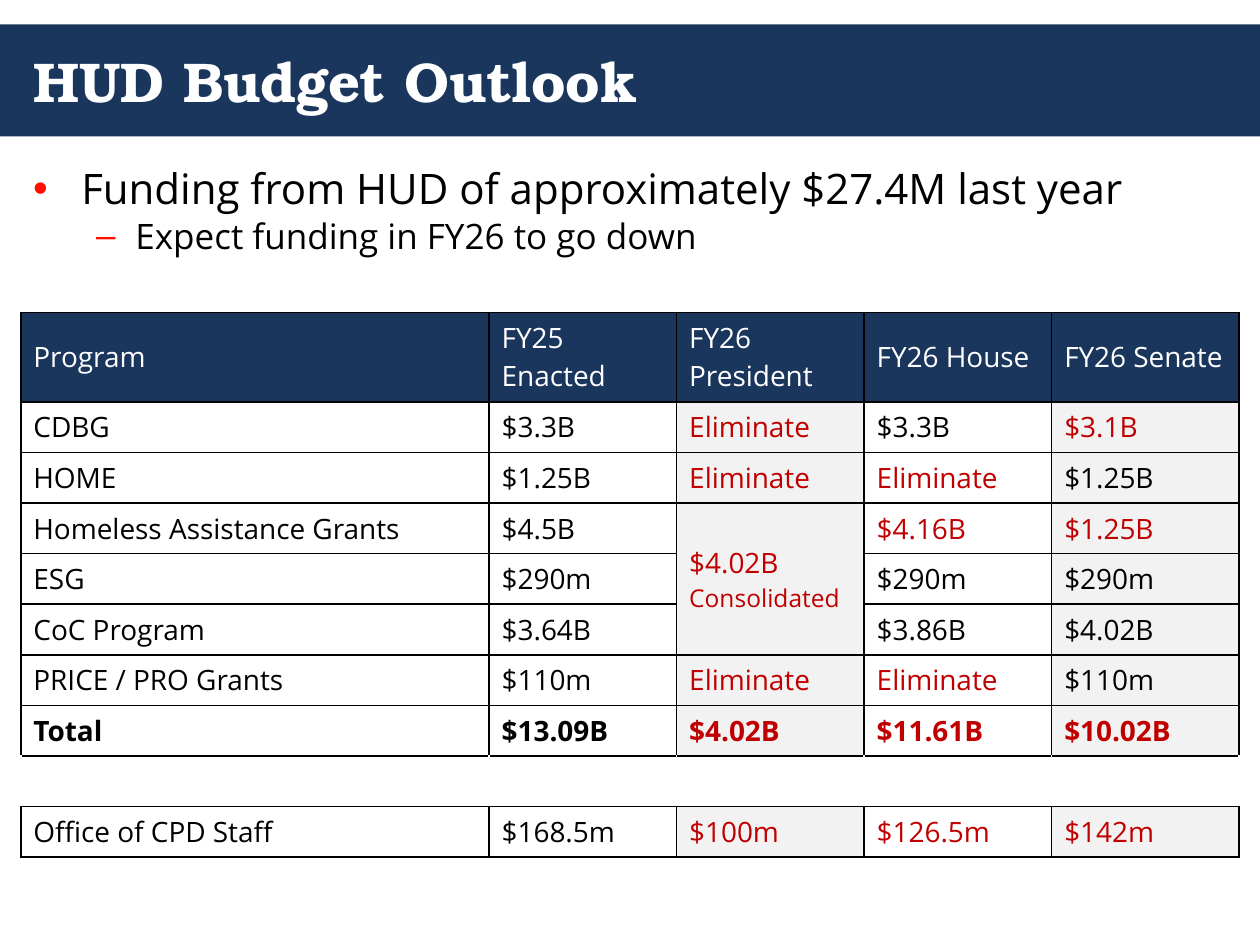
from lxml.etree import SubElement as Sub
from pptx import Presentation
from pptx.dml.color import RGBColor as Rgb
from pptx.enum.shapes import MSO_SHAPE as Form
from pptx.enum.text import MSO_ANCHOR as Anchor, PP_ALIGN as Align
from pptx.oxml.ns import qn
from pptx.util import Cm, Pt

NAVY = Rgb(0x1B, 0x36, 0x5D)
WHITE = Rgb(0xFF, 0xFF, 0xFF)
BLACK = Rgb(0, 0, 0)
RED = Rgb(0xC0, 0, 0)
BRIGHT = Rgb(0xFF, 0x0F, 0)
GREY = Rgb(0xF2, 0xF2, 0xF2)
SANS = "Open Sans"
SERIF = "TeX Gyre Bonum"

FLAG = "!"
HEAD, MERGE, TOTAL = 1, 4, 8
SHADED = (2, 4)
ROWS = [
    [],
    ["Program", "FY25 Enacted", "FY26 President", "FY26 House", "FY26 Senate"],
    ["CDBG", "$3.3B", "!Eliminate", "$3.3B", "!$3.1B"],
    ["HOME", "$1.25B", "!Eliminate", "!Eliminate", "$1.25B"],
    ["Homeless Assistance Grants", "$4.5B", "!$4.02B\nConsolidated",
     "!$4.16B", "!$1.25B"],
    ["ESG", "$290m", "", "$290m", "$290m"],
    ["CoC Program", "$3.64B", "", "$3.86B", "$4.02B"],
    ["PRICE / PRO Grants", "$110m", "!Eliminate", "!Eliminate", "$110m"],
    ["Total", "$13.09B", "!$4.02B", "!$11.61B", "!$10.02B"],
    [],
    ["Office of CPD Staff", "$168.5m", "!$100m", "!$126.5m", "!$142m"],
]
POINTS = [
    ("Funding from HUD of approximately $27.4M last year", "•", 24, 0.97, 0.97, 0),
    ("Expect funding in FY26 to go down", "–", 20, 2.06, 0.79, 1),
]


def style(para, size, color, face=SANS, bold=False):
    font = para.font
    font.size, font.name, font.bold = Pt(size), face, bold
    font.color.rgb = color


def add_title(slide, left, top, width, height):
    band = slide.shapes.add_shape(Form.RECTANGLE, left, top, width, height)
    band.shadow.inherit = False
    band.fill.solid()
    band.fill.fore_color.rgb = NAVY
    band.line.fill.background()
    title = slide.shapes.title
    title._element.addprevious(band._element)
    pad = Cm(0.42)
    title.left, title.top = left + pad, top
    title.width, title.height = width - 2 * pad, height
    frame = title.text_frame
    frame.text = "HUD Budget Outlook"
    frame.vertical_anchor = Anchor.MIDDLE
    para = frame.paragraphs[0]
    para.alignment = Align.LEFT
    style(para, 32, WHITE, SERIF, True)


def add_bullet(para, mark, margin, hang):
    props = para._p.get_or_add_pPr()
    props.set("marL", str(Cm(margin)))
    props.set("indent", str(-Cm(hang)))
    tint = Sub(props, qn("a:buClr"))
    Sub(tint, qn("a:srgbClr"), val=str(BRIGHT))
    Sub(props, qn("a:buFont"), typeface="Arial")
    Sub(props, qn("a:buChar"), char=mark)


def add_points(slide, left, top, width, height):
    frame = slide.shapes.add_textbox(left, top, width, height).text_frame
    frame.word_wrap = True
    frame.text = "\n".join(point[0] for point in POINTS)
    for level, (para, point) in enumerate(zip(frame.paragraphs, POINTS)):
        _, mark, size, margin, hang, gap = point
        para.level = level
        para.space_before = Pt(gap)
        add_bullet(para, mark, margin, hang)
        style(para, size, BLACK)


def add_edges(cell, sides):
    props = cell._tc.get_or_add_tcPr()
    for side in sides:
        edge = Sub(props, qn("a:ln" + side), w=str(Pt(1)))
        fill = Sub(edge, qn("a:solidFill"))
        Sub(fill, qn("a:srgbClr"), val=str(BLACK))


def fill_cell(cell, text, row, col):
    add_edges(cell, "LRTB" if text else "TB" if row else "B")
    if text and (row == HEAD or col in SHADED):
        cell.fill.solid()
        cell.fill.fore_color.rgb = NAVY if row == HEAD else GREY
    else:
        cell.fill.background()
    if col or row == HEAD:
        cell.vertical_anchor = Anchor.MIDDLE
    color = WHITE if row == HEAD else RED if text.startswith(FLAG) else BLACK
    cell.text_frame.text = text.lstrip(FLAG)
    for index, para in enumerate(cell.text_frame.paragraphs):
        style(para, 14 if index else 16, color, bold=row == TOTAL)


def add_budget(slide, left, top, width, height):
    count = len(ROWS[HEAD])
    frame = slide.shapes.add_table(len(ROWS), count, left, top, width, height)
    table = frame.table
    table.first_row = table.horz_banding = False
    lead = Cm(9.44)
    for col, column in enumerate(table.columns):
        column.width = (width - lead) // (count - 1) if col else lead
    tall = Cm(1.8)
    for row, line in enumerate(table.rows):
        line.height = tall if row == HEAD else (height - tall) // (len(ROWS) - 1)
    table.cell(MERGE, 2).merge(table.cell(MERGE + 2, 2))
    for row, texts in enumerate(ROWS):
        for col, text in enumerate(texts or [""] * count):
            cell = table.cell(row, col)
            if not cell.is_spanned:
                fill_cell(cell, text, row, col)


def main():
    deck = Presentation()
    deck.slide_width, deck.slide_height = Cm(25.4), Cm(19.05)
    slide = deck.slides.add_slide(deck.slide_layouts[5])
    add_title(slide, 0, Cm(0.49), deck.slide_width, Cm(2.26))
    add_points(slide, Cm(0.42), Cm(3.15), Cm(24.56), Cm(3.38))
    add_budget(slide, Cm(0.42), Cm(5.28), Cm(24.56), Cm(12))
    deck.save("out.pptx")


if __name__ == "__main__":
    main()
